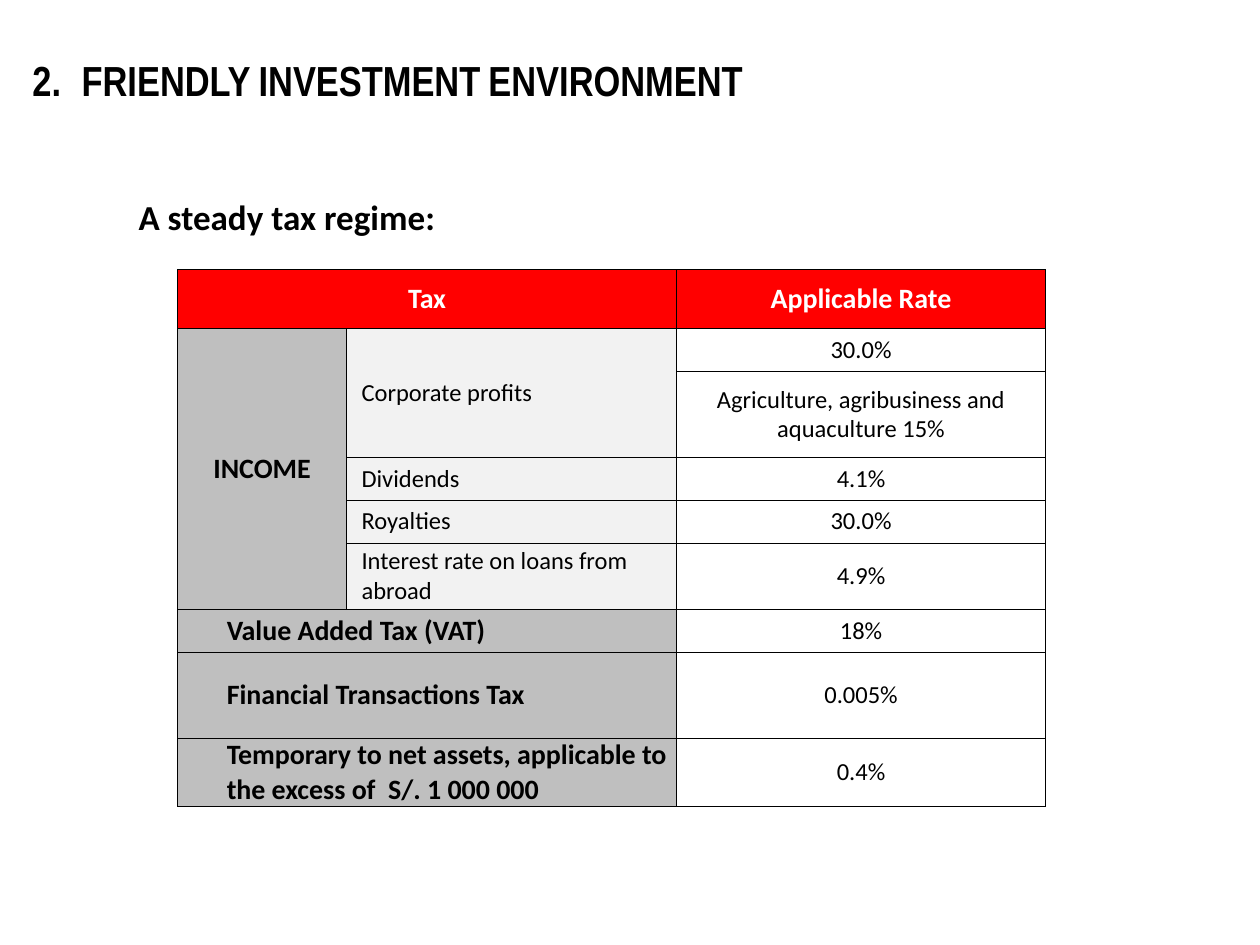
"""Build a slide with a table of tax rates."""
from lxml import etree
from pptx import Presentation
from pptx.dml.color import RGBColor
from pptx.enum.text import MSO_ANCHOR, PP_ALIGN
from pptx.oxml.ns import qn
from pptx.util import Inches, Pt

LEFT, CENTER = PP_ALIGN.LEFT, PP_ALIGN.CENTER
MIDDLE = MSO_ANCHOR.MIDDLE
BLACK = RGBColor(0, 0, 0)
WHITE = RGBColor(255, 255, 255)
RED = RGBColor(255, 0, 0)
GRAY = RGBColor(0xBF, 0xBF, 0xBF)
PALE = RGBColor(0xF2, 0xF2, 0xF2)
BODY_FONT, HEADING_FONT = "Calibri", "Arial Narrow"

HEADING = ["FRIENDLY", "INVESTMENT", "ENVIRONMENT"]
TITLE = "A steady tax regime:"
COLUMN_WIDTHS = [1.34, 2.62, 2.93]
ROW_HEIGHTS = [0.47, 0.34, 0.68, 0.34, 0.34, 0.53, 0.34, 0.68, 0.53]
STYLES = {
    "header": dict(size=16, bold=True, color=WHITE, fill=RED, align=CENTER, indent=0),
    "group": dict(size=16, bold=True, color=BLACK, fill=GRAY, align=CENTER, indent=0),
    "tax": dict(size=16, bold=True, color=BLACK, fill=GRAY, align=LEFT, indent=0.39),
    "income": dict(size=14, bold=False, color=BLACK, fill=PALE, align=LEFT, indent=0.12),
    "rate": dict(size=14, bold=False, color=BLACK, fill=None, align=CENTER, indent=0),
}
CELLS = [
    (0, 0, 1, 2, "header", "Tax"),
    (0, 2, 1, 1, "header", "Applicable Rate"),
    (1, 0, 5, 1, "group", "INCOME"),
    (1, 1, 2, 1, "income", "Corporate profits"),
    (3, 1, 1, 1, "income", "Dividends"),
    (4, 1, 1, 1, "income", "Royalties"),
    (5, 1, 1, 1, "income", "Interest rate on loans from abroad"),
    (6, 0, 1, 2, "tax", "Value Added Tax (VAT)"),
    (7, 0, 1, 2, "tax", "Financial Transactions Tax"),
    (8, 0, 1, 2, "tax", "Temporary to net assets, applicable to the excess of  S/. 1 000 000"),
]
RATES = ["30.0%", "Agriculture, agribusiness and aquaculture 15%", "4.1%", "30.0%",
         "4.9%", "18%", "0.005%", "0.4%"]


def add_run(paragraph, text, size, font=BODY_FONT, bold=True, color=BLACK):
    run = paragraph.add_run()
    run.text = text
    run.font.size = Pt(size)
    run.font.name = font
    run.font.bold = bold
    run.font.color.rgb = color


def add_borders(cell):
    properties = cell._tc.get_or_add_tcPr()
    for side in ("lnL", "lnR", "lnT", "lnB"):
        line = etree.SubElement(properties, qn(f"a:{side}"), w=str(Pt(0.5)))
        fill = etree.SubElement(line, qn("a:solidFill"))
        etree.SubElement(fill, qn("a:srgbClr"), val=str(BLACK))


def fill_cell(table, row, column, rows, columns, style_name, text):
    style = STYLES[style_name]
    cell = table.cell(row, column)
    if rows * columns > 1:
        cell.merge(table.cell(row + rows - 1, column + columns - 1))
    cell.margin_left = Inches(style["indent"])
    cell.margin_right = cell.margin_top = cell.margin_bottom = 0
    cell.vertical_anchor = MIDDLE
    if style["fill"] is None:
        cell.fill.background()
    else:
        cell.fill.solid()
        cell.fill.fore_color.rgb = style["fill"]
    paragraph = cell.text_frame.paragraphs[0]
    paragraph.alignment = style["align"]
    add_run(paragraph, text, style["size"], bold=style["bold"], color=style["color"])


def add_tax_table(slide):
    table = slide.shapes.add_table(
        len(ROW_HEIGHTS), len(COLUMN_WIDTHS), Inches(1.41), Inches(2.14),
        Inches(sum(COLUMN_WIDTHS)), Inches(sum(ROW_HEIGHTS))).table
    for column, width in zip(table.columns, COLUMN_WIDTHS):
        column.width = Inches(width)
    for row, height in zip(table.rows, ROW_HEIGHTS):
        row.height = Inches(height)
    for cell in table.iter_cells():
        add_borders(cell)
        cell.fill.background()
    for entry in CELLS:
        fill_cell(table, *entry)
    for row, rate in enumerate(RATES, start=1):
        fill_cell(table, row, 2, 1, 1, "rate", rate)


def add_heading(slide):
    frame = slide.shapes.add_textbox(
        Inches(0.16), Inches(0.25), Inches(6.17), Inches(0.77)).text_frame
    frame.word_wrap = True
    frame.vertical_anchor = MIDDLE
    paragraph = frame.paragraphs[0]
    properties = paragraph._p.get_or_add_pPr()
    properties.set("marL", str(Inches(0.39)))
    properties.set("indent", str(Inches(-0.39)))
    etree.SubElement(properties, qn("a:buFont"), typeface=HEADING_FONT)
    etree.SubElement(properties, qn("a:buAutoNum"), type="arabicPeriod", startAt="2")
    for position, word in enumerate(HEADING):
        if position:
            add_run(paragraph, " ", 20)
        add_run(paragraph, word, 24, HEADING_FONT)


def place_title(title):
    title.left, title.top = Inches(1), Inches(1.48)
    title.width, title.height = Inches(9), Inches(0.47)
    title.text_frame.vertical_anchor = MIDDLE
    paragraph = title.text_frame.paragraphs[0]
    paragraph.alignment = LEFT
    add_run(paragraph, TITLE, 20)


def main():
    deck = Presentation()
    deck.slide_width, deck.slide_height = Inches(10), Inches(7.5)
    slide = deck.slides.add_slide(deck.slide_layouts[5])
    place_title(slide.shapes.title)
    add_tax_table(slide)
    add_heading(slide)
    deck.save("out.pptx")


if __name__ == "__main__":
    main()
